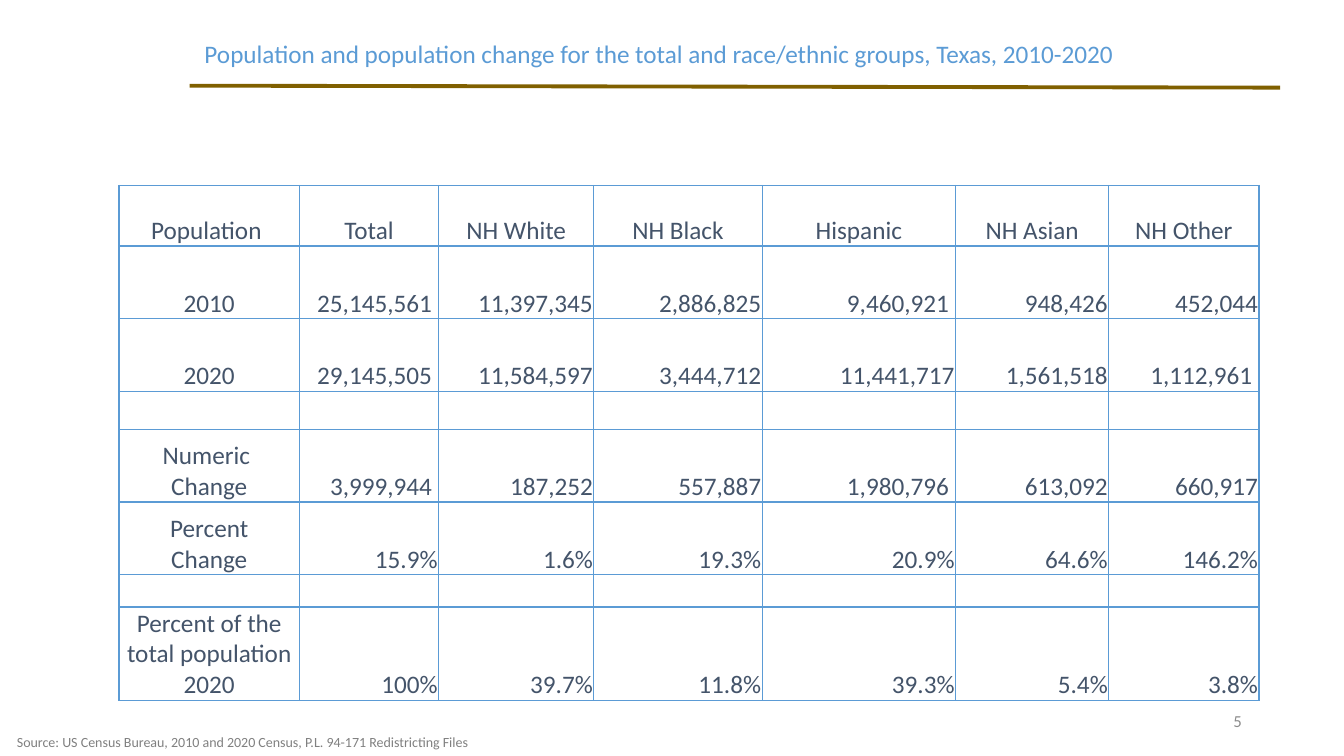
from lxml.etree import SubElement
from pptx import Presentation
from pptx.dml.color import RGBColor
from pptx.enum.shapes import MSO_CONNECTOR as Connector
from pptx.enum.text import MSO_ANCHOR as Anchor, PP_ALIGN as Align
from pptx.oxml.ns import qn
from pptx.util import Pt

BLUE, SLATE, GOLD = "5B9BD5", "44546A", "806000"

TEXTS = [
    dict(text="Population and population change for the total and race/ethnic groups, Texas, 2010-2020",
         box=(139, 26.6, 704, 26.6), size=18, color=BLUE, align=Align.LEFT,
         frame=dict(word_wrap=True), paragraph=dict(line_spacing=0.9)),
    dict(text="5", box=(678.2, 500.4, 216, 28.8), size=12, color="8C8C8C", align=Align.RIGHT,
         frame=dict(word_wrap=True, vertical_anchor=Anchor.MIDDLE), paragraph={}),
    dict(text="Source: US Census Bureau, 2010 and 2020 Census, P.L. 94-171 Redistricting Files",
         box=(5, 520.6, 343.4, 19.4), size=10, color="808080", align=Align.LEFT,
         frame=dict(word_wrap=False), paragraph={}),
]

RULE = (135.4, 61.2, 914.4, 62.6)
TABLE_LEFT, TABLE_TOP = 85, 132.5
COLUMN_WIDTHS = [128.9, 99.4, 110.9, 120.2, 138.2, 109.4, 107.3]
ROW_HEIGHTS = [43.2, 52, 52, 27, 52, 52, 23, 66]
ROWS = [
    ["Population ", "Total", "NH White", "NH Black", "Hispanic", "NH Asian", "NH Other"],
    ["2010", "25,145,561 ", "11,397,345", "2,886,825", "9,460,921 ", "948,426", "452,044"],
    ["2020", "29,145,505 ", "11,584,597", "3,444,712", "11,441,717", "1,561,518", "1,112,961 "],
    [""] * 7,
    ["Numeric \nChange", "3,999,944 ", "187,252", "557,887", "1,980,796 ", "613,092", "660,917"],
    ["Percent\nChange", "15.9%", "1.6%", "19.3%", "20.9%", "64.6%", "146.2%"],
    [""] * 7,
    ["Percent of the total population\n2020", "100%", "39.7%", "11.8%", "39.3%", "5.4%", "3.8%"],
]
CELL_FORMAT = dict(margin_left=Pt(0.7), margin_right=Pt(0.7), margin_top=Pt(0.7),
                   margin_bottom=Pt(0), vertical_anchor=Anchor.BOTTOM)


def color_of(code):
    return RGBColor.from_string(code)


def set_all(target, values):
    for name, value in values.items():
        setattr(target, name, value)


def write(frame, text, size, color, align, paragraph_format):
    frame.text = text
    for paragraph in frame.paragraphs:
        set_all(paragraph, dict(alignment=align, **paragraph_format))
        set_all(paragraph.font, dict(size=Pt(size), name="Calibri"))
        paragraph.font.color.rgb = color_of(color)


def add_borders(cell):
    properties = cell._tc.get_or_add_tcPr()
    for position, side in enumerate(("a:lnL", "a:lnR", "a:lnT", "a:lnB")):
        line = properties.makeelement(qn(side), {"w": str(Pt(1))})
        fill = SubElement(line, qn("a:solidFill"))
        SubElement(fill, qn("a:srgbClr"), val=BLUE)
        properties.insert(position, line)


def add_rule(slide):
    rule = slide.shapes.add_connector(Connector.STRAIGHT, *map(Pt, RULE))
    rule.line.width = Pt(2.75)
    rule.line.color.rgb = color_of(GOLD)
    SubElement(rule._element.spPr, qn("a:effectLst"))


def add_population_table(slide):
    shape = slide.shapes.add_table(len(ROWS), len(COLUMN_WIDTHS), Pt(TABLE_LEFT), Pt(TABLE_TOP),
                                   Pt(sum(COLUMN_WIDTHS)), Pt(sum(ROW_HEIGHTS)))
    table = shape.table
    set_all(table, dict(first_row=False, horz_banding=False))
    for column, width in zip(table.columns, COLUMN_WIDTHS):
        column.width = Pt(width)
    for row_index, (row, height) in enumerate(zip(table.rows, ROW_HEIGHTS)):
        row.height = Pt(height)
        for column_index, cell in enumerate(row.cells):
            is_label = row_index == 0 or column_index == 0
            set_all(cell, CELL_FORMAT)
            cell.fill.background()
            add_borders(cell)
            write(cell.text_frame, ROWS[row_index][column_index], 18, SLATE,
                  Align.CENTER if is_label else Align.RIGHT, {})


def main():
    presentation = Presentation()
    set_all(presentation, dict(slide_width=Pt(960), slide_height=Pt(540)))
    slide = presentation.slides.add_slide(presentation.slide_layouts[6])
    add_rule(slide)
    add_population_table(slide)
    for item in TEXTS:
        frame = slide.shapes.add_textbox(*map(Pt, item["box"])).text_frame
        set_all(frame, item["frame"])
        write(frame, item["text"], item["size"], item["color"], item["align"], item["paragraph"])
    presentation.save("out.pptx")


if __name__ == "__main__":
    main()
